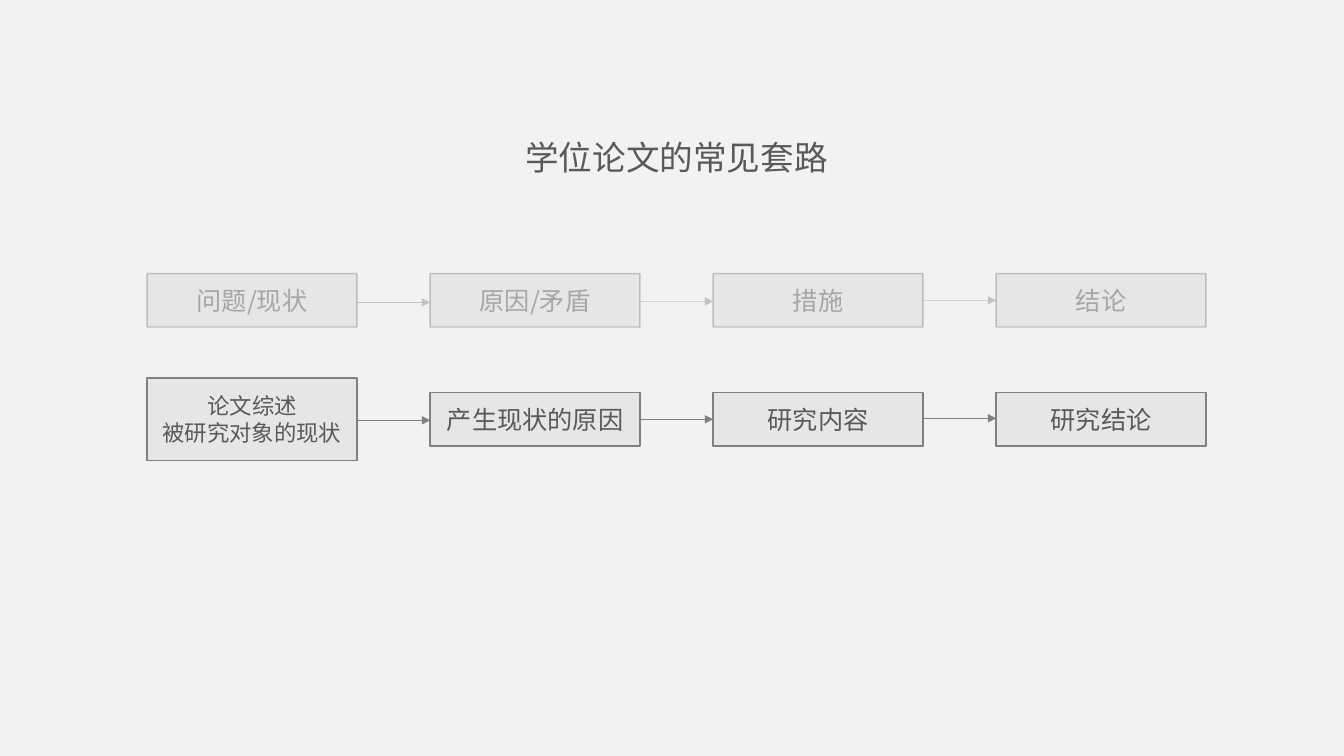
import dataclasses
import typing

import lxml.etree
import pptx
import pptx.dml.color
import pptx.enum.shapes
import pptx.enum.text
import pptx.oxml.ns
import pptx.util


@dataclasses.dataclass(frozen=True)
class Theme:
    font: str = "Noto Sans CJK SC"
    background: str = "F2F2F2"
    box: str = "E7E6E6"
    line: str = "808080"
    text: str = "595959"
    faded_text: str = "A6A6A6"
    faded_alpha: int = 42
    title_size: int = 24
    box_size: int = 18
    small_size: int = 16
    box_line: float = 1
    arrow_line: float = 0.5


@dataclasses.dataclass(frozen=True)
class Grid:
    left: float = 1.46
    last_left: float = 9.88
    columns: int = 4
    box_width: float = 2.08
    box_height: float = 0.53
    tall_height: float = 0.82
    arrow_drop: float = 0.01

    def x(self, column: int) -> float:
        return self.left + column * (self.last_left - self.left) / (self.columns - 1)


@dataclasses.dataclass(frozen=True)
class Flow:
    labels: tuple[str, ...]
    middle: float
    arrow_y: float
    faded: bool = False


THEME = Theme()
GRID = Grid()
FLOWS = (
    Flow(("问题/现状", "原因/矛盾", "措施", "结论"), 2.98, 3.0, faded=True),
    Flow(("论文综述\n被研究对象的现状", "产生现状的原因", "研究内容", "研究结论"), 4.16, 4.17),
)


def rgb(value: str) -> pptx.dml.color.RGBColor:
    return pptx.dml.color.RGBColor.from_string(value)


def add_tag(parent: typing.Any, tag: str, **attributes: str) -> None:
    lxml.etree.SubElement(parent, pptx.oxml.ns.qn(tag), attributes)


def format_text(tf: typing.Any, size: int, color: str) -> None:
    for p in tf.paragraphs:
        p.alignment = pptx.enum.text.PP_ALIGN.CENTER
        for r in p.runs:
            r.font.size = pptx.util.Pt(size)
            r.font.name = THEME.font
            r.font.color.rgb = rgb(color)
            add_tag(r.font._element, "a:ea", typeface=THEME.font)


def format_line(sp: typing.Any, width: float, faded: bool) -> None:
    sp.line.width = pptx.util.Pt(width)
    sp.line.color.rgb = rgb(THEME.line)
    if faded:
        color = sp.line._ln.find(".//" + pptx.oxml.ns.qn("a:srgbClr"))
        add_tag(color, "a:alpha", val=str(THEME.faded_alpha * 1000))


def add_box(shapes: typing.Any, flow: Flow, column: int) -> None:
    label = flow.labels[column]
    tall = "\n" in label
    height = GRID.tall_height if tall else GRID.box_height
    sp = shapes.add_shape(
        pptx.enum.shapes.MSO_SHAPE.RECTANGLE,
        *map(pptx.util.Inches, (GRID.x(column), flow.middle - height / 2, GRID.box_width, height)),
    )
    sp.shadow.inherit = False
    sp.fill.solid()
    sp.fill.fore_color.rgb = rgb(THEME.box)
    format_line(sp, THEME.box_line, flow.faded)
    tf = sp.text_frame
    tf.text = label
    tf.word_wrap = True
    tf.vertical_anchor = pptx.enum.text.MSO_ANCHOR.MIDDLE
    size = THEME.small_size if tall else THEME.box_size
    format_text(tf, size, THEME.faded_text if flow.faded else THEME.text)


def add_arrow(shapes: typing.Any, flow: Flow, column: int) -> None:
    y = flow.arrow_y - column * GRID.arrow_drop
    ends = (GRID.x(column) + GRID.box_width, y, GRID.x(column + 1), y)
    sp = shapes.add_connector(
        pptx.enum.shapes.MSO_CONNECTOR.STRAIGHT, *map(pptx.util.Inches, ends)
    )
    format_line(sp, THEME.arrow_line, flow.faded)
    add_tag(sp.line._ln, "a:tailEnd", type="triangle")
    add_tag(sp._element.spPr, "a:effectLst")


def add_flow(slide: typing.Any, flow: Flow) -> None:
    shapes = slide.shapes.add_group_shape().shapes if flow.faded else slide.shapes
    for column in range(GRID.columns):
        add_box(shapes, flow, column)
    for column in range(GRID.columns - 1):
        add_arrow(shapes, flow, column)


def add_title(slide: typing.Any, text: str) -> None:
    sp = slide.shapes.title
    sp.left, sp.top, sp.width, sp.height = map(pptx.util.Inches, (4.54, 1.31, 4.34, 0.5))
    tf = sp.text_frame
    tf.text = text
    tf.word_wrap = True
    tf.auto_size = pptx.enum.text.MSO_AUTO_SIZE.SHAPE_TO_FIT_TEXT
    tf.vertical_anchor = pptx.enum.text.MSO_ANCHOR.TOP
    format_text(tf, THEME.title_size, THEME.text)


def main() -> None:
    """Build the slide on the usual storyline of a thesis."""
    prs = pptx.Presentation()
    prs.slide_width, prs.slide_height = map(pptx.util.Inches, (13.33, 7.5))
    slide = prs.slides.add_slide(prs.slide_layouts.get_by_name("Title Only"))
    slide.background.fill.solid()
    slide.background.fill.fore_color.rgb = rgb(THEME.background)
    add_title(slide, "学位论文的常见套路")
    for flow in FLOWS:
        add_flow(slide, flow)
    prs.save("out.pptx")


if __name__ == "__main__":
    main()
